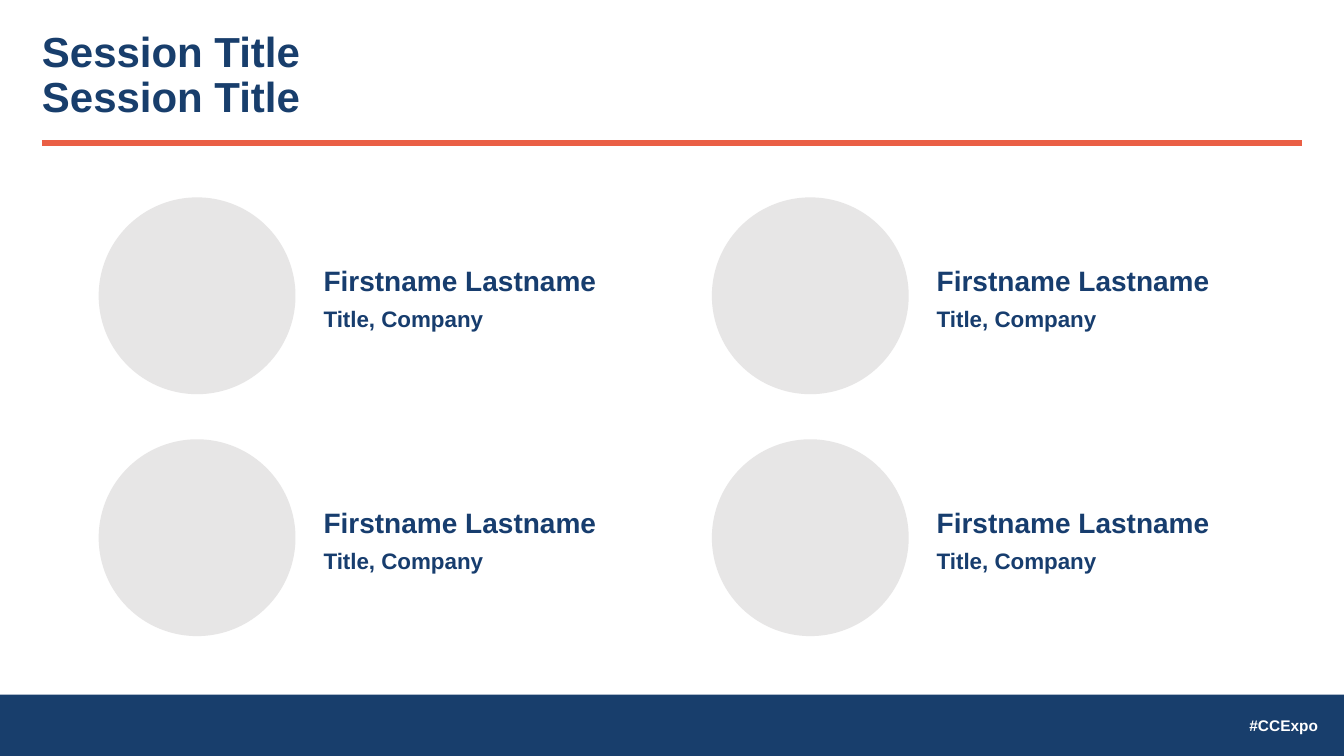
from pptx import Presentation
from pptx.dml.color import RGBColor
from pptx.enum.shapes import MSO_CONNECTOR, MSO_SHAPE
from pptx.enum.text import MSO_ANCHOR as Anchor, MSO_AUTO_SIZE as AutoSize, PP_ALIGN as Align
from pptx.oxml.ns import qn
from pptx.util import Pt
from lxml import etree

COLORS = {"navy": "183E6C", "name": "173D6E", "coral": "EA5F45",
          "portrait": "E7E6E6", "white": "FFFFFF"}
FONT = "Arial"
SLIDE_W, SLIDE_H = 960, 540
MARGIN = 30

# Speaker grid
GRID_LEFT, GRID_TOP = 70.5, 141
COLUMN_STEP, ROW_STEP = 438, 172.8
PORTRAIT_SIZE = 140.6
TEXT_OFFSET, TEXT_W = 160.6, 217.4

SPEAKERS = [("Firstname Lastname", "Title, Company")] * 4


def color(key):
    return RGBColor.from_string(COLORS[key])


def format_text(holder, text, size, ink, align=Align.LEFT, anchor=Anchor.TOP, spacing=1.0):
    frame = holder.text_frame
    frame_format = {"word_wrap": True, "auto_size": AutoSize.NONE, "vertical_anchor": anchor,
                    "margin_left": 0, "margin_top": 0, "margin_right": 0, "margin_bottom": 0}
    for attribute, value in frame_format.items():
        setattr(frame, attribute, value)
    line = frame.paragraphs[0]
    line.text = text
    line.alignment = align
    line.line_spacing = spacing
    for run in line.runs:
        for attribute, value in {"name": FONT, "size": Pt(size), "bold": True}.items():
            setattr(run.font, attribute, value)
        run.font.color.rgb = color(ink)


def add_label(slide, left, top, width, height, *text_format, **options):
    label = slide.shapes.add_textbox(Pt(left), Pt(top), Pt(width), Pt(height))
    format_text(label, *text_format, **options)


def add_filled(slide, outline, left, top, width, height, fill):
    filled = slide.shapes.add_shape(outline, Pt(left), Pt(top), Pt(width), Pt(height))
    filled.shadow.inherit = False
    filled.fill.solid()
    filled.fill.fore_color.rgb = color(fill)
    filled.line.fill.background()


def add_rule(slide, top):
    rule = slide.shapes.add_connector(MSO_CONNECTOR.STRAIGHT, Pt(MARGIN), Pt(top),
                                      Pt(SLIDE_W - MARGIN), Pt(top))
    rule.line.color.rgb = color("coral")
    rule.line.width = Pt(4)
    etree.SubElement(rule.line._get_or_add_ln().getparent(), qn("a:effectLst"))


def set_title(slide, text):
    title = slide.shapes.title
    place = {"left": MARGIN, "top": 22.3, "width": SLIDE_W - 2 * MARGIN, "height": 65.5}
    for attribute, value in place.items():
        setattr(title, attribute, Pt(value))
    format_text(title, text, 30, "navy", spacing=0.9)


def add_speaker(slide, left, top, name, role):
    add_filled(slide, MSO_SHAPE.OVAL, left, top, PORTRAIT_SIZE, PORTRAIT_SIZE, "portrait")
    text_left = left + TEXT_OFFSET
    add_label(slide, text_left, top + 47.5, TEXT_W, 24.5, name, 20, "name")
    add_label(slide, text_left, top + 77.2, TEXT_W, 19.4, role, 16, "name")


def main():
    deck = Presentation()
    deck.slide_width, deck.slide_height = Pt(SLIDE_W), Pt(SLIDE_H)
    slide = deck.slides.add_slide(deck.slide_layouts[5])

    # Footer band with hashtag
    add_filled(slide, MSO_SHAPE.RECTANGLE, 0, 496.2, SLIDE_W, SLIDE_H - 496.2, "navy")
    add_label(slide, 156, 506, 785.5, 26, "#CCExpo", 11, "white",
              align=Align.RIGHT, anchor=Anchor.MIDDLE, spacing=0.9)

    # Heading
    set_title(slide, "Session Title\vSession Title")
    add_rule(slide, 102.2)

    # Speakers, two per row
    for index, (name, role) in enumerate(SPEAKERS):
        row, column = divmod(index, 2)
        add_speaker(slide, GRID_LEFT + column * COLUMN_STEP, GRID_TOP + row * ROW_STEP,
                    name, role)

    deck.save("out.pptx")


if __name__ == "__main__":
    main()
